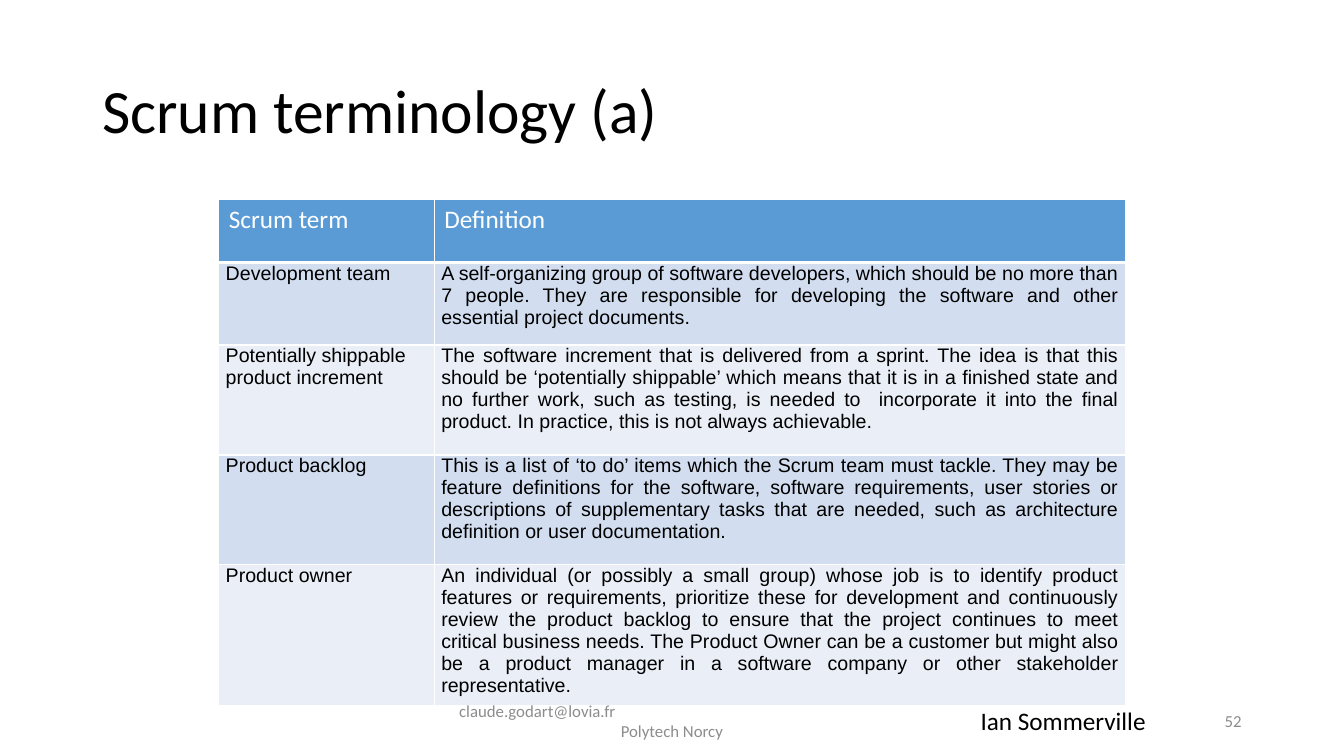
import pptx
import pptx.dml.color
import pptx.enum.text
import pptx.oxml
import pptx.oxml.ns
import pptx.util

Pt = pptx.util.Pt
RGBColor = pptx.dml.color.RGBColor
ALIGN = pptx.enum.text.PP_ALIGN
ANCHOR = pptx.enum.text.MSO_ANCHOR

BLACK = RGBColor(0x00, 0x00, 0x00)
WHITE = RGBColor(0xFF, 0xFF, 0xFF)
GREY = RGBColor(0x8C, 0x8C, 0x8C)
HEADER_BLUE = RGBColor(0x5B, 0x9B, 0xD5)
BAND_COLOURS = (RGBColor(0xD2, 0xDE, 0xEF), RGBColor(0xEA, 0xEF, 0xF7))

COLUMN_WIDTHS = (154, 494)
ROW_HEIGHTS = (45, 59, 78.5, 78.5, 95)
TERMS = (
    ("Scrum term", "Definition"),
    ("Development team",
     "A self-organizing group of software developers, which should be no more than 7 people. "
     "They are responsible for developing the software and other essential project documents."),
    ("Potentially shippable product increment",
     "The software increment that is delivered from a sprint. The idea is that this should be "
     "‘potentially shippable’ which means that it is in a finished state and no further work, "
     "such as testing, is needed to  incorporate it into the final product. In practice, this "
     "is not always achievable."),
    ("Product backlog",
     "This is a list of ‘to do’ items which the Scrum team must tackle. They may be feature "
     "definitions for the software, software requirements, user stories or descriptions of "
     "supplementary tasks that are needed, such as architecture definition or user documentation."),
    ("Product owner",
     "An individual (or possibly a small group) whose job is to identify product features or "
     "requirements, prioritize these for development and continuously review the product backlog "
     "to ensure that the project continues to meet critical business needs. The Product Owner can "
     "be a customer but might also be a product manager in a software company or other "
     "stakeholder representative."),
)


def write(paragraph, text, size=18, font="Calibri", colour=BLACK, align=ALIGN.LEFT, spacing=None):
    paragraph.alignment = align
    paragraph.line_spacing = spacing
    run = paragraph.add_run()
    run.text = text
    run.font.size = Pt(size)
    run.font.name = font
    run.font.color.rgb = colour


def add_text_frame(slide, left, top, width, height, anchor=ANCHOR.MIDDLE, wrap=True, inset=7.2):
    frame = slide.shapes.add_textbox(Pt(left), Pt(top), Pt(width), Pt(height)).text_frame
    frame.word_wrap = wrap
    frame.vertical_anchor = anchor
    frame.margin_left = frame.margin_right = Pt(inset)
    return frame


def set_borders(cell, bottom_width):
    properties = cell._tc.get_or_add_tcPr()
    for side, width in (("L", 1), ("R", 1), ("T", 1), ("B", bottom_width)):
        properties.append(pptx.oxml.parse_xml(
            f'<a:ln{side} {pptx.oxml.ns.nsdecls("a")} w="{Pt(width)}">'
            f'<a:solidFill><a:srgbClr val="{WHITE}"/></a:solidFill></a:ln{side}>'))


def fill_cell(cell, text, row, column):
    is_header = row == 0
    set_borders(cell, 3 if is_header else 1)
    cell.fill.solid()
    cell.fill.fore_color.rgb = HEADER_BLUE if is_header else BAND_COLOURS[(row - 1) % 2]
    paragraph = cell.text_frame.paragraphs[0]
    if is_header:
        write(paragraph, text, colour=WHITE)
        return
    cell.margin_left = cell.margin_right = Pt(5)
    cell.margin_top = cell.margin_bottom = Pt(0)
    write(paragraph, text, size=14, font="Arial",
          align=ALIGN.JUSTIFY if column == 1 else ALIGN.LEFT)


def add_terms_table(slide, left, top):
    table = slide.shapes.add_table(
        len(TERMS), len(COLUMN_WIDTHS), Pt(left), Pt(top),
        Pt(sum(COLUMN_WIDTHS)), Pt(sum(ROW_HEIGHTS))).table
    for column, width in zip(table.columns, COLUMN_WIDTHS):
        column.width = Pt(width)
    for row, (height, texts) in enumerate(zip(ROW_HEIGHTS, TERMS)):
        table.rows[row].height = Pt(height)
        for column, text in enumerate(texts):
            fill_cell(table.cell(row, column), text, row, column)


def main():
    deck = pptx.Presentation()
    deck.slide_width, deck.slide_height = Pt(960), Pt(540)
    slide = deck.slides.add_slide(deck.slide_layouts[6])

    # Title
    title = add_text_frame(slide, 66, 28.75, 828, 104.4)
    write(title.paragraphs[0], "Scrum terminology (a)", size=44, spacing=0.9)

    # Terms and definitions
    add_terms_table(slide, 156.25, 142.5)

    # Slide number
    number = add_text_frame(slide, 678, 500.5, 216, 28.75)
    write(number.paragraphs[0], "52", size=12, colour=GREY, align=ALIGN.RIGHT)

    # Credit
    credit = add_text_frame(slide, 693.3, 500.5, 134, 29, anchor=ANCHOR.TOP, wrap=False)
    write(credit.paragraphs[0], "Ian Sommerville")

    # Footer
    footer = add_text_frame(slide, 318, 500.5, 324, 28.75, inset=10)
    write(footer.paragraphs[0], "claude.godart@lovia.fr", size=12, colour=GREY)
    write(footer.add_paragraph(), "Polytech Norcy", size=12, colour=GREY, align=ALIGN.CENTER)

    deck.save("out.pptx")


if __name__ == "__main__":
    main()
